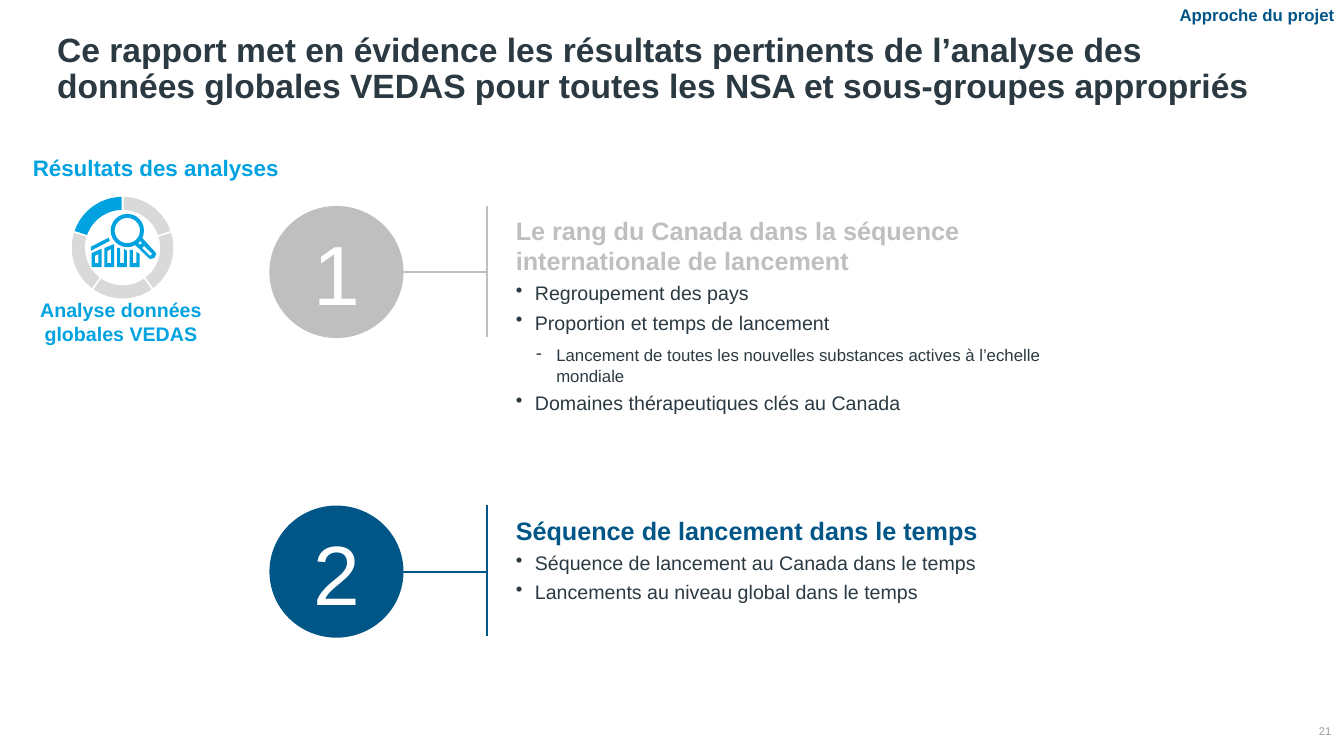
import math
from lxml import etree
from pptx import Presentation, util as u
from pptx.dml.color import RGBColor
from pptx.enum import shapes, text
from pptx.oxml import ns

Cm, Pt = u.Cm, u.Pt
DARK, BLUE, GREY, SKY = "2B3A42", "005686", "BFBFBF", "00A3E0"
PALE, WHITE = "D9D9D9", "FFFFFF"
LEFT, MID, RIGHT = text.PP_ALIGN.LEFT, text.PP_ALIGN.CENTER, text.PP_ALIGN.RIGHT

# text, box (left, top, width, height), size, colour, bold, align, anchor, inset
TOP, CTR, END = text.MSO_ANCHOR.TOP, text.MSO_ANCHOR.MIDDLE, text.MSO_ANCHOR.BOTTOM
LABELS = [
    ("21", (32.56, 18.19, 0.99, 0.48), 8, "959CA0", False, RIGHT, CTR, 0),
    ("Analyse données globales VEDAS", (0.74, 7.39, 4.62, 1.45), 14, SKY, True, MID, TOP, None),
    ("Résultats des analyses", (0, 3.76, 7.85, 0.94), 16, SKY, True, MID, TOP, None),
    ("Approche du projet", (29.41, 0, 4.47, 0.76), 12, "005587", True, RIGHT, TOP, None),
]
TITLE = ("Ce rapport met en évidence les résultats pertinents de l’analyse des "
         "données globales VEDAS pour toutes les NSA et sous-groupes appropriés",
         (1.19, 0.66, 31.5, 2.13), 24, DARK, True, LEFT, END, None)

# number, colour, top, text width, text height, heading, points (level, text)
PARTS = [
    ("1", GREY, 5.23, 13.77, 5.92,
     "Le rang du Canada dans la séquence internationale de lancement",
     [(0, "Regroupement des pays"),
      (0, "Proportion et temps de lancement"),
      (1, "Lancement de toutes les nouvelles substances actives à l’echelle mondiale"),
      (0, "Domaines thérapeutiques clés au Canada")]),
    ("2", BLUE, 12.78, 17.5, 3.35,
     "Séquence de lancement dans le temps",
     [(0, "Séquence de lancement au Canada dans le temps"),
      (0, "Lancements au niveau global dans le temps")]),
]
# bullet, left margin, hanging indent, space before, size
LEVELS = [("•", 0.48, 0.48, 4, 14), ("-", 1.02, 0.51, 8, 12)]
DISC_X, DISC_W, DISC_H, BAR_X, TEXT_X = 6.83, 3.3, 3.25, 12.27, 12.75

# ring: centre x, centre y, outer radius, inner radius, gap
RING = (3.09, 6.24, 1.28, 0.95, 0.05)
SLICES = [PALE, PALE, PALE, PALE, SKY]
# top left, top right, closed at the top
BARS = [(6.38, 6.27, True), (6.25, 6.15, True), (6.25, 6.32, False), (6.3, 6.4, False)]
BAR_L, BAR_STEP, BAR_W, WALL, BASE = 2.31, 0.32, 0.25, 0.08, 6.73
TREND = [(2.29, 6.32), (2.77, 6.07), (2.74, 5.99), (2.29, 6.22)]
HANDLE = [
    [(3.58, 5.99), (3.91, 6.35), (3.94, 6.4), (3.89, 6.5), (3.78, 6.53), (3.4, 6.17)],
    [(3.58, 6.25), (3.63, 6.2), (3.84, 6.4), (3.78, 6.45)],
    [(3.53, 6.17), (3.48, 6.12), (3.53, 6.07), (3.58, 6.12)],
]
LENS = (2.79, 5.39, 0.84, 0.84)

deck = Presentation()
deck.slide_width, deck.slide_height = Cm(33.87), Cm(19.05)
slide = deck.slides.add_slide(deck.slide_layouts[6])
pen = slide.shapes


def rgb(code):
    return RGBColor.from_string(code)


def style(par, size, code, bold=False):
    font = par.font
    font.name, font.size, font.bold = "Arial", Pt(size), bold
    font.color.rgb = rgb(code)


def paint(shape, code):
    shape.shadow.inherit = False
    shape.fill.solid()
    shape.fill.fore_color.rgb = rgb(code)
    shape.line.fill.background()


def inset(frame, size):
    frame.margin_left = frame.margin_right = Cm(size)
    frame.margin_top = frame.margin_bottom = Cm(size)


def label(words, box, size, code, bold, align, anchor, pad):
    frame = pen.add_textbox(*map(Cm, box)).text_frame
    frame.word_wrap, frame.vertical_anchor = True, anchor
    if pad is not None:
        inset(frame, pad)
    par = frame.paragraphs[0]
    par.text, par.alignment = words, align
    style(par, size, code, bold)
    return par


def outline(loops, code):
    """Fill one freeform made of closed loops; inner loops are holes."""
    pts = [[(Cm(x), Cm(y)) for x, y in loop] for loop in loops]
    form = pen.build_freeform(*pts[0][0])
    for i, loop in enumerate(pts):
        if i:
            form.move_to(*loop[0])
        form.add_line_segments(loop[1:], close=True)
    paint(form.convert_to_shape(), code)


def ring():
    cx, cy, outer, inner, gap = RING
    step = 2 * math.pi / len(SLICES)
    for i, code in enumerate(SLICES):
        loop = []
        for rad, way in ((outer, 1), (inner, -1)):
            trim = math.asin(gap / 2 / rad)
            arc = [i * step + trim + (step - 2 * trim) * k / 24 for k in range(25)]
            loop += [(cx + rad * math.sin(a), cy - rad * math.cos(a)) for a in arc[::way]]
        outline([loop], code)


def bars():
    for i, (lt, rt, shut) in enumerate(BARS):
        left = BAR_L + i * BAR_STEP
        right = left + BAR_W
        a, b, low = left + WALL, right - WALL, BASE - 0.1
        if shut:
            loops = [[(left, lt), (right, rt), (right, BASE), (left, BASE)],
                     [(a, lt + 0.07), (b, rt + 0.13), (b, low), (a, low)]]
        else:
            loops = [[(left, lt), (a, lt), (a, low), (b, low), (b, rt - 0.05),
                      (right, rt), (right, BASE), (left, BASE)]]
        outline(loops, SKY)


def rule(x1, y1, x2, y2, code):
    line = pen.add_connector(shapes.MSO_CONNECTOR.STRAIGHT, *map(Cm, (x1, y1, x2, y2)))
    line.line.color.rgb, line.line.width = rgb(code), Pt(1.5)
    etree.SubElement(line._element.spPr, ns.qn("a:effectLst"))


def point(frame, level, words):
    mark, margin, hang, gap, size = LEVELS[level]
    par = frame.add_paragraph()
    par.text, par.level = words, level
    props = par._p.get_or_add_pPr()
    props.set("marL", str(Cm(margin)))
    props.set("indent", str(-Cm(hang)))
    etree.SubElement(props, ns.qn("a:buChar")).set("char", mark)
    par.space_before = Pt(gap)
    style(par, size, DARK)


def part(num, code, top, width, height, head, points):
    disc = pen.add_shape(shapes.MSO_SHAPE.OVAL, *map(Cm, (DISC_X, top, DISC_W, DISC_H)))
    paint(disc, code)
    disc.line.color.rgb, disc.line.width = rgb(code), Pt(2.25)
    frame = disc.text_frame
    inset(frame, 0)
    frame.vertical_anchor = CTR
    par = frame.paragraphs[0]
    par.text, par.alignment = num, MID
    style(par, 60, WHITE)

    rule(BAR_X, top - 0.05, BAR_X, top + DISC_H, code)
    mid = top + DISC_H / 2
    rule(DISC_X + DISC_W, mid, BAR_X, mid, code)

    box = pen.add_textbox(*map(Cm, (TEXT_X, top + 0.07, width, height)))
    frame = box.text_frame
    frame.word_wrap = True
    frame.paragraphs[0].text = head
    style(frame.paragraphs[0], 18, code, True)
    for level, words in points:
        point(frame, level, words)


label(*TITLE).line_spacing = 0.9
ring()
bars()
outline([TREND], SKY)
lens = pen.add_shape(shapes.MSO_SHAPE.DONUT, *map(Cm, LENS))
lens.adjustments[0] = 0.12
paint(lens, SKY)
outline(HANDLE, SKY)
for item in LABELS:
    label(*item)
for item in PARTS:
    part(*item)
deck.save("out.pptx")
